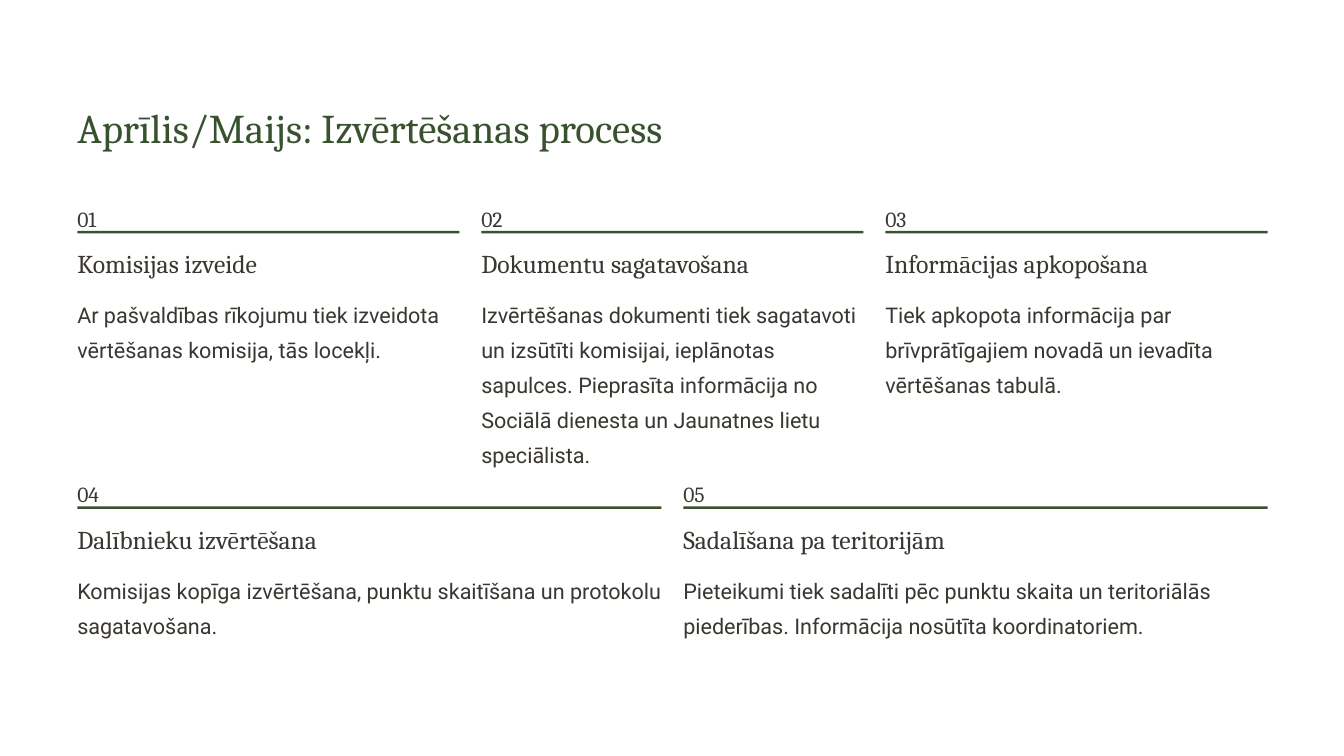
"""Build the slide that shows the five steps of the evaluation process."""
from pptx import Presentation
from pptx.dml.color import RGBColor
from pptx.enum import shapes, text
from pptx.util import Inches, Pt

TITLE = "Aprīlis/Maijs: Izvērtēšanas process"
STEP_ROWS = [
    [
        ("01", "Komisijas izveide",
         "Ar pašvaldības rīkojumu tiek izveidota vērtēšanas komisija, tās locekļi.", 2),
        ("02", "Dokumentu sagatavošana",
         "Izvērtēšanas dokumenti tiek sagatavoti un izsūtīti komisijai, ieplānotas sapulces. "
         "Pieprasīta informācija no Sociālā dienesta un Jaunatnes lietu speciālista.", 5),
        ("03", "Informācijas apkopošana",
         "Tiek apkopota informācija par brīvprātīgajiem novadā un ievadīta vērtēšanas tabulā.", 3),
    ],
    [
        ("04", "Dalībnieku izvērtēšana",
         "Komisijas kopīga izvērtēšana, punktu skaitīšana un protokolu sagatavošana.", 2),
        ("05", "Sadalīšana pa teritorijām",
         "Pieteikumi tiek sadalīti pēc punktu skaita un teritoriālās piederības. "
         "Informācija nosūtīta koordinatoriem.", 2),
    ],
]
GREEN, DARK = "38512F", "3A3630"
SERIF, SANS = "Cambria", "Roboto"
LEFT, CONTENT_WIDTH, GAP = 0.92, 14.17, 0.26
FIRST_ROW_TOP, ROW_PITCH = 2.34, 3.28
LINE_HEIGHT = 0.42


def color(value):
    return RGBColor.from_string(value)


def place(shape, left, top, width, height):
    shape.left, shape.top = Inches(left), Inches(top)
    shape.width, shape.height = Inches(width), Inches(height)


def write(shape, words, size, spacing, font_name, font_color):
    frame = shape.text_frame
    frame.margin_left = frame.margin_top = frame.margin_right = frame.margin_bottom = 0
    frame.word_wrap = True
    frame.auto_size = text.MSO_AUTO_SIZE.NONE
    frame.vertical_anchor = text.MSO_ANCHOR.TOP
    frame.text = words
    paragraph = frame.paragraphs[0]
    paragraph.alignment = text.PP_ALIGN.LEFT
    paragraph.line_spacing = Pt(spacing)
    paragraph.font.size = Pt(size)
    paragraph.font.name = font_name
    paragraph.font.color.rgb = color(font_color)


def add_text(slide, box, *style):
    shape = slide.shapes.add_textbox(*map(Inches, box))
    write(shape, *style)


def add_step(slide, step, left, top, width):
    number, heading, description, line_count = step
    add_text(slide, (left, top, 0.5, 0.33), number, 18.5, 30, SERIF, DARK)
    rule = slide.shapes.add_shape(
        shapes.MSO_SHAPE.RECTANGLE, *map(Inches, (left, top + 0.41, width, 0.03)))
    rule.shadow.inherit = False
    rule.fill.solid()
    rule.fill.fore_color.rgb = color(GREEN)
    rule.line.fill.background()
    add_text(slide, (left, top + 0.6, width, 0.38), heading, 22, 27.5, SERIF, DARK)
    add_text(slide, (left, top + 1.15, width, line_count * LINE_HEIGHT),
             description, 18.5, 30, SANS, DARK)


def main():
    presentation = Presentation()
    presentation.slide_width, presentation.slide_height = Inches(16), Inches(9)
    slide = presentation.slides.add_slide(presentation.slide_layouts[5])
    slide.background.fill.solid()
    slide.background.fill.fore_color.rgb = color("FFFFFF")
    title = slide.shapes.title
    place(title, LEFT, 1.2, 8, 0.62)
    write(title, TITLE, 35, 44, SERIF, GREEN)
    for row, steps in enumerate(STEP_ROWS):
        width = (CONTENT_WIDTH - GAP * (len(steps) - 1)) / len(steps)
        for column, step in enumerate(steps):
            add_step(slide, step, LEFT + column * (width + GAP),
                     FIRST_ROW_TOP + row * ROW_PITCH, width)
    presentation.save("out.pptx")


if __name__ == "__main__":
    main()
